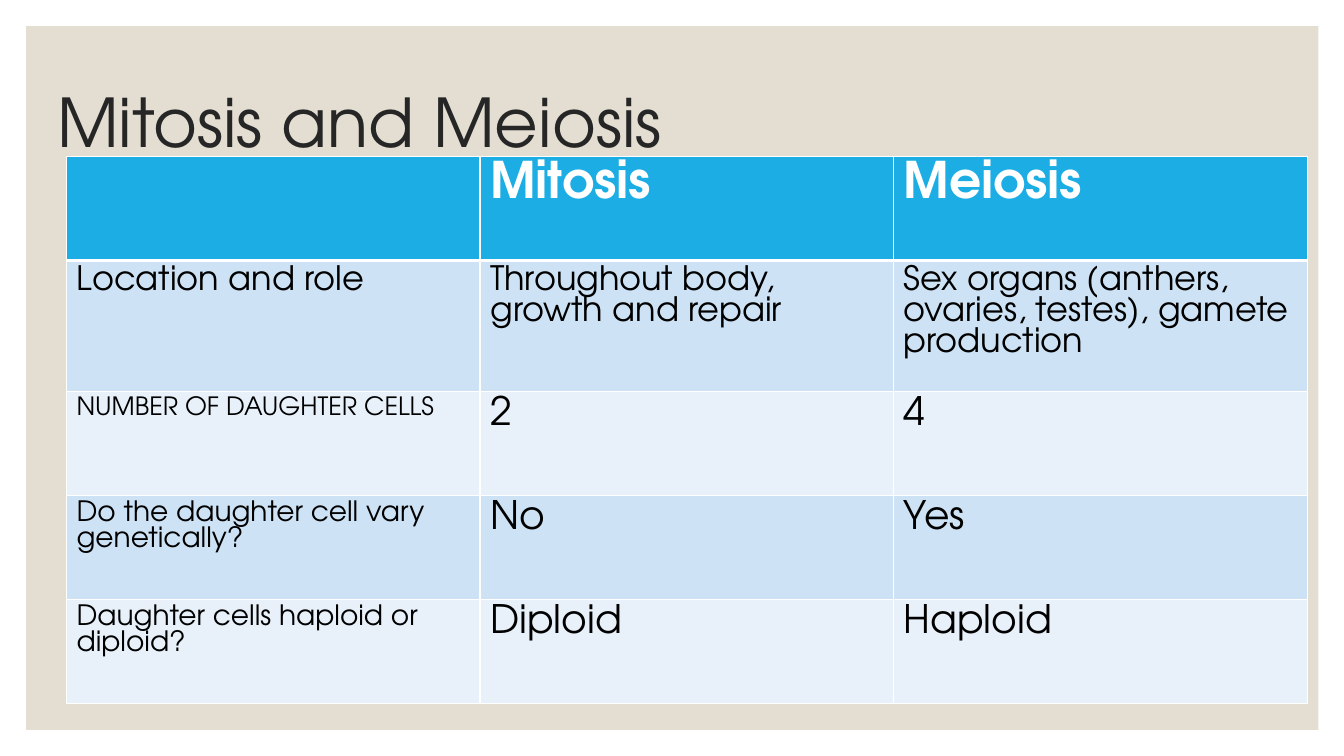
from lxml import etree
from pptx import Presentation
from pptx.dml.color import RGBColor
from pptx.enum import shapes, text
from pptx.oxml import ns
from pptx.util import Pt

COLOURS = {
    "panel": "E3DED1",
    "title": "262626",
    "header": "1CADE4",
    "odd": "CDE3F5",
    "even": "E8F1FA",
    "white": "FFFFFF",
    "black": "000000",
}
FONT = "TeX Gyre Adventor"
COLUMN_WIDTH = 295.4
ROW_HEIGHT = 74.4
HEADINGS = ["", "Mitosis", "Meiosis"]
COMPARISONS = [
    (["Location and role", "Throughout body, growth and repair",
      "Sex organs (anthers, ovaries, testes), gamete production"], 24, 24),
    (["NUMBER OF DAUGHTER CELLS", "2", "4"], 18, 28),
    (["Do the daughter cell vary genetically?", "No", "Yes"], 20, 28),
    (["Daughter cells haploid or diploid?", "Diploid", "Haploid"], 20, 28),
]


def colour(name):
    return RGBColor.from_string(COLOURS[name])


def write(frame, wording, size, ink="black", bold=False, spacing=None):
    frame.word_wrap = True
    paragraph = frame.paragraphs[0]
    paragraph.alignment = text.PP_ALIGN.LEFT
    if spacing:
        paragraph.line_spacing = spacing
    if not wording:
        return
    run = paragraph.add_run()
    run.text = wording
    run.font.name = FONT
    run.font.size = Pt(size)
    run.font.bold = bold
    run.font.color.rgb = colour(ink)


def add_panel(slide):
    panel = slide.shapes.add_shape(
        shapes.MSO_SHAPE.RECTANGLE, Pt(18.7), Pt(18.7), Pt(923), Pt(502.6))
    panel.shadow.inherit = False
    panel.fill.solid()
    panel.fill.fore_color.rgb = colour("panel")
    panel.line.fill.background()


def add_title(slide, wording):
    title = slide.shapes.add_textbox(Pt(33.8), Pt(20.9), Pt(842.4), Pt(137.5))
    title.text_frame.vertical_anchor = text.MSO_ANCHOR.MIDDLE
    write(title.text_frame, wording, size=48, ink="title", spacing=0.9)


def add_border(cell, side, width):
    line = etree.Element(ns.qn(f"a:{side}"), w=str(Pt(width)))
    fill = etree.SubElement(line, ns.qn("a:solidFill"))
    etree.SubElement(fill, ns.qn("a:srgbClr"), val=COLOURS["white"])
    return line


def style_cell(cell, fill, top=1, bottom=1):
    cell.fill.solid()
    cell.fill.fore_color.rgb = colour(fill)
    widths = {"lnL": 1, "lnR": 1, "lnT": top, "lnB": bottom}
    properties = cell._tc.get_or_add_tcPr()
    for position, (side, width) in enumerate(widths.items()):
        properties.insert(position, add_border(cell, side, width))


def add_comparison(slide):
    row_count, column_count = len(COMPARISONS) + 1, len(HEADINGS)
    table = slide.shapes.add_table(
        row_count, column_count, Pt(47.5), Pt(111.6),
        Pt(COLUMN_WIDTH * column_count), Pt(ROW_HEIGHT * row_count)).table
    for column in table.columns:
        column.width = Pt(COLUMN_WIDTH)
    for row in table.rows:
        row.height = Pt(ROW_HEIGHT)
    for column, heading in enumerate(HEADINGS):
        cell = table.cell(0, column)
        write(cell.text_frame, heading, size=36, ink="white", bold=True)
        style_cell(cell, "header", bottom=3)
    for row, (answers, label_size, answer_size) in enumerate(COMPARISONS, 1):
        for column, answer in enumerate(answers):
            cell = table.cell(row, column)
            write(cell.text_frame, answer,
                  size=answer_size if column else label_size)
            style_cell(cell, "odd" if row % 2 else "even",
                       top=3 if row == 1 else 1)


def main():
    deck = Presentation()
    deck.slide_width, deck.slide_height = Pt(960), Pt(540)
    slide = deck.slides.add_slide(deck.slide_layouts[6])
    add_panel(slide)
    add_title(slide, "Mitosis and Meiosis")
    add_comparison(slide)
    deck.save("out.pptx")


if __name__ == "__main__":
    main()
